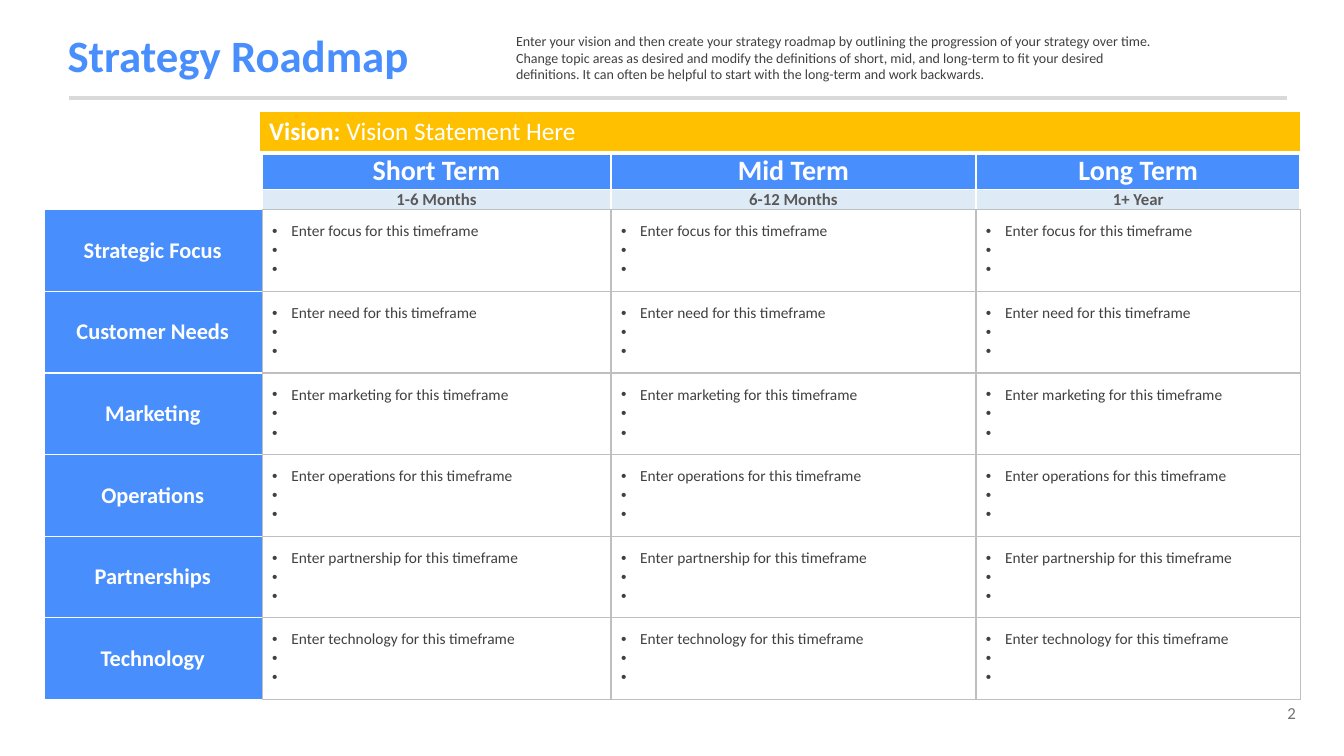
"""Build the strategy roadmap slide."""
import lxml.etree
import pptx
import pptx.dml.color
import pptx.enum.shapes
import pptx.enum.text
import pptx.oxml.ns
import pptx.util

Inches = pptx.util.Inches
Pt = pptx.util.Pt
qn = pptx.oxml.ns.qn
ALIGN = pptx.enum.text.PP_ALIGN
MIDDLE = pptx.enum.text.MSO_ANCHOR.MIDDLE
TOP = pptx.enum.text.MSO_ANCHOR.TOP

COLORS = {
    "blue": "488EFD", "pale": "DEEBF7", "amber": "FFC000", "white": "FFFFFF",
    "text": "404040", "muted": "595959", "number": "767171",
    "rule": "D9D9D9", "grid": "BFBFBF",
}


class SlideBuilder:
    """Holds the style and the current slide."""

    def __init__(self, slide, font="Calibri"):
        self.slide = slide
        self.font = font

    def color(self, name):
        return pptx.dml.color.RGBColor.from_string(COLORS[name])

    def fill_text(self, frame, paragraphs, size, color, align=ALIGN.LEFT, bold=False, bullet=False):
        for index, parts in enumerate(paragraphs):
            paragraph = frame.paragraphs[0] if index == 0 else frame.add_paragraph()
            paragraph.alignment = align
            for text, weight in parts if isinstance(parts, list) else [(parts, bold)]:
                run = paragraph.add_run()
                run.text = text
                style = {"name": self.font, "size": Pt(size), "bold": weight}
                for name, value in style.items():
                    setattr(run.font, name, value)
                run.font.color.rgb = self.color(color)
            if bullet:
                properties = paragraph._p.get_or_add_pPr()
                indent = Inches(0.19)
                properties.set("marL", str(indent))
                properties.set("indent", str(-indent))
                lxml.etree.SubElement(properties, qn("a:buFont"), typeface="Arial")
                lxml.etree.SubElement(properties, qn("a:buChar"), char="•")

    def title(self, text, left, top, width, height):
        shape = self.slide.shapes.title
        box = {"left": left, "top": top, "width": width, "height": height}
        for name, value in box.items():
            setattr(shape, name, Inches(value))
        frame = shape.text_frame
        frame.auto_size = pptx.enum.text.MSO_AUTO_SIZE.NONE
        frame.vertical_anchor = MIDDLE
        self.fill_text(frame, [text], 32, "blue", bold=True)
        frame.paragraphs[0].line_spacing = 0.9

    def text(self, text, left, top, width, height, **style):
        shape = self.slide.shapes.add_textbox(*map(Inches, (left, top, width, height)))
        shape.text_frame.word_wrap = True
        self.fill_text(shape.text_frame, [text], **style)

    def line(self, start, end, color, width):
        connector = self.slide.shapes.add_connector(
            pptx.enum.shapes.MSO_CONNECTOR.STRAIGHT, *map(Inches, start + end))
        connector.line.color.rgb = self.color(color)
        connector.line.width = Pt(width)
        lxml.etree.SubElement(connector._element.spPr, qn("a:effectLst"))

    def table(self, left, top, widths, heights):
        table = self.slide.shapes.add_table(
            len(heights), len(widths),
            *map(Inches, (left, top, sum(widths), sum(heights)))).table
        table.first_row = table.horz_banding = False
        for column, width in zip(table.columns, widths):
            column.width = Inches(width)
        for row, height in zip(table.rows, heights):
            row.height = Inches(height)
        return table

    def cell(self, cell, paragraphs, fill, borders, anchor=MIDDLE, margin=0, **style):
        for name, value in {"vertical_anchor": anchor, "margin_top": Inches(margin),
                            "margin_bottom": Inches(margin)}.items():
            setattr(cell, name, value)
        if fill:
            cell.fill.solid()
            cell.fill.fore_color.rgb = self.color(fill)
        else:
            cell.fill.background()
        if paragraphs:
            self.fill_text(cell.text_frame, paragraphs, **style)
        else:
            lxml.etree.SubElement(cell.text_frame.paragraphs[0]._p, qn("a:endParaRPr"), sz="1000")
        properties = cell._tc.get_or_add_tcPr()
        for position, side in enumerate("LRTB"):
            color, width = borders.get(side, ("grid", 1))
            border = lxml.etree.Element(qn(f"a:ln{side}"), w=str(Pt(width)))
            solid = lxml.etree.SubElement(border, qn("a:solidFill"))
            lxml.etree.SubElement(solid, qn("a:srgbClr"), val=COLORS[color])
            properties.insert(position, border)


presentation = pptx.Presentation()
presentation.slide_width = Inches(13.33)
presentation.slide_height = Inches(7.5)
builder = SlideBuilder(presentation.slides.add_slide(presentation.slide_layouts[5]))

THIN, THICK = ("white", 1), ("white", 2.25)
TERMS = [("Short Term", "1-6 Months"), ("Mid Term", "6-12 Months"), ("Long Term", "1+ Year")]
TOPICS = [("Strategic Focus", "focus"), ("Customer Needs", "need"), ("Marketing", "marketing"),
          ("Operations", "operations"), ("Partnerships", "partnership"),
          ("Technology", "technology")]

builder.text("2", 11.93, 6.92, 1.02, 0.3, size=12, color="number", align=ALIGN.RIGHT)
builder.line((0.68, 0.97), (12.76, 0.97), "rule", 3)
builder.title("Strategy Roadmap", 0.57, 0.19, 10.94, 0.77)

roadmap = builder.table(0.43, 1.51, [2.17, 3.46, 3.62, 3.22], [0.37, 0.19] + [0.81] * len(TOPICS))
for row, top in enumerate((THICK, THIN)):
    builder.cell(roadmap.cell(row, 0), [], None, {"L": THICK, "R": THIN, "T": top, "B": THIN})
for column, (term, months) in enumerate(TERMS, 1):
    right = THICK if column == len(TERMS) else THIN
    builder.cell(roadmap.cell(0, column), [term], "blue",
                 {"L": THIN, "R": right, "T": THICK, "B": THIN},
                 size=20, color="white", align=ALIGN.CENTER, bold=True)
    builder.cell(roadmap.cell(1, column), [months], "pale",
                 {"L": THIN, "R": right, "T": THIN},
                 size=12, color="muted", align=ALIGN.CENTER, bold=True)
for row, (topic, subject) in enumerate(TOPICS, 2):
    builder.cell(roadmap.cell(row, 0), [topic], "blue", {"L": THICK, "T": THIN, "B": THIN},
                 size=16, color="white", align=ALIGN.CENTER, bold=True)
    for column in range(1, len(TERMS) + 1):
        builder.cell(roadmap.cell(row, column), [f"Enter {subject} for this timeframe", " ", " "],
                     "white", {}, size=11, color="text", bullet=True)

vision = builder.table(2.57, 1.11, [10.33], [0.41])
builder.cell(vision.cell(0, 0), [[("Vision:", True), (" Vision Statement Here", False)]], "amber",
             {"L": THIN, "R": THIN, "T": THIN, "B": ("white", 3)},
             anchor=TOP, margin=0.05, size=18, color="white")

builder.text(
    "Enter your vision and then create your strategy roadmap by outlining the progression of your "
    "strategy over time. Change topic areas as desired and modify the definitions of short, mid, "
    "and long-term to fit your desired definitions. It can often be helpful to start with the "
    "long-term and work backwards.", 5.02, 0.27, 6.49, 0.61, size=10, color="text")

presentation.save("out.pptx")
